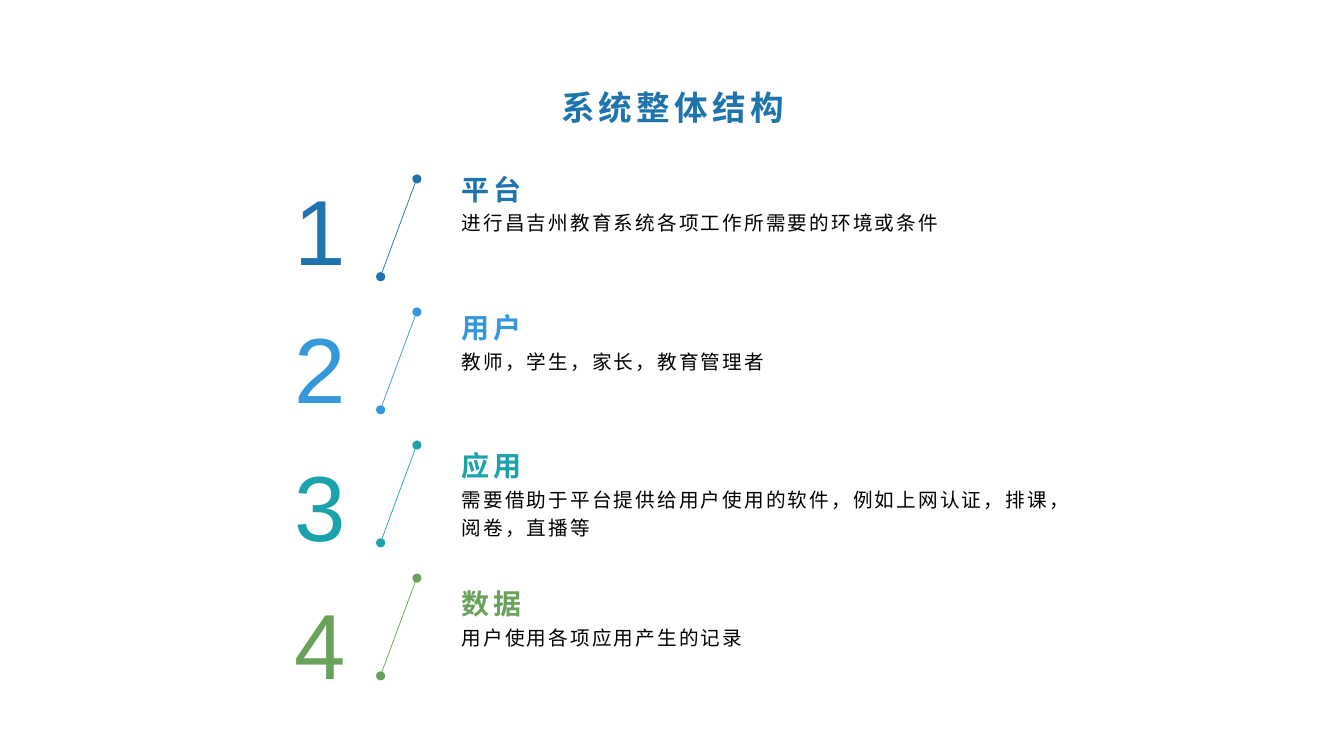
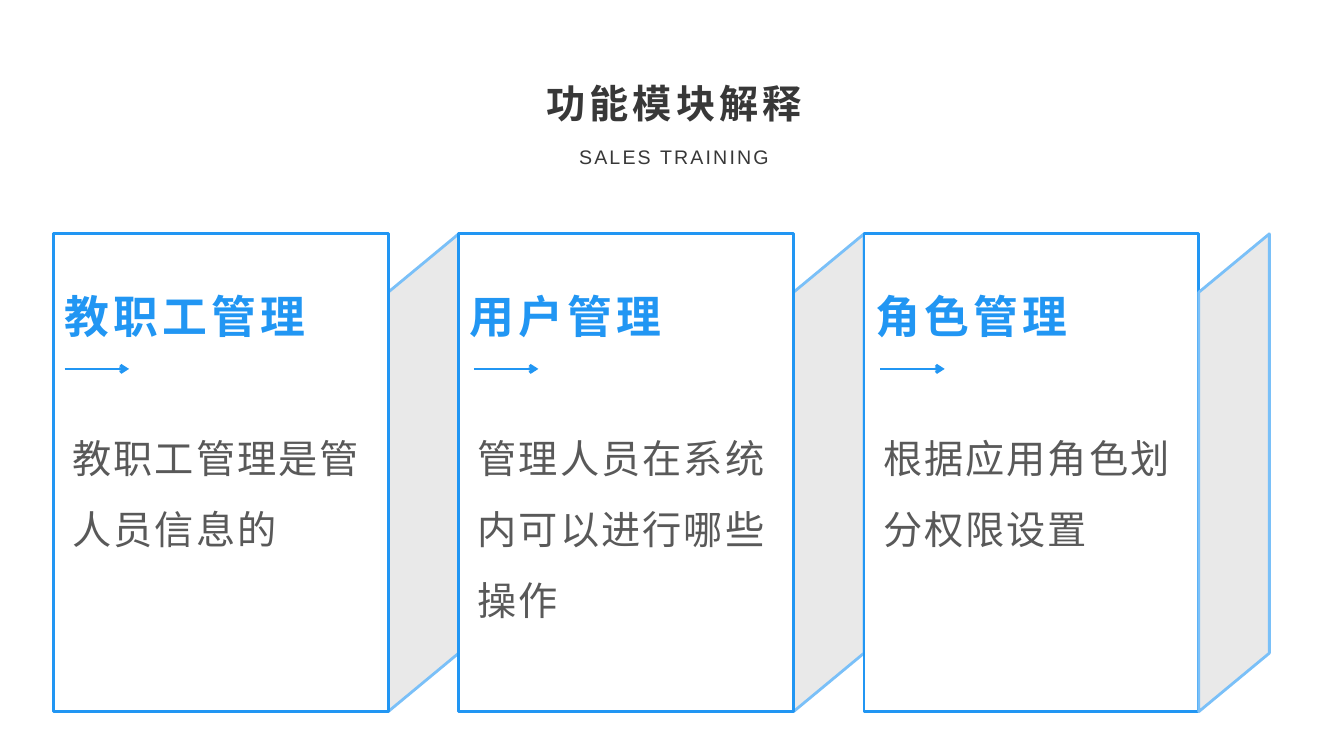
from pptx import Presentation
from pptx.dml.color import RGBColor
from pptx.enum.shapes import MSO_CONNECTOR, MSO_SHAPE
from pptx.enum.text import MSO_ANCHOR, PP_ALIGN
from pptx.oxml.ns import qn
from pptx.util import Inches, Pt
from lxml.etree import SubElement

COLORS = {
    "navy": "1F74AD",
    "sky": "3498DB",
    "teal": "1AA3AA",
    "green": "69A35B",
    "black": "000000",
    "heading": "383838",
    "body": "595959",
    "panel": "FFFFFF",
    "panel_edge": "2196F3",
    "side": "E9E9E9",
    "side_edge": "7AC0F8",
}
CJK = "Noto Sans CJK SC"


def text_style(size, line_spacing, spacing=1.5, name="Arial", bold=False,
               alignment=PP_ALIGN.LEFT, **frame):
    return {
        "font": {"size": Pt(size), "name": name, "bold": bold},
        "paragraph": {"line_spacing": line_spacing, "alignment": alignment},
        "frame": {"word_wrap": True, **frame},
        "spacing": spacing,
    }


STYLES = {
    "structure_title": text_style(24, 1.2, 3, bold=True, alignment=PP_ALIGN.CENTER,
                                  vertical_anchor=MSO_ANCHOR.MIDDLE),
    "number": text_style(66, 1.1),
    "layer": text_style(20, 1.1, 3, bold=True, margin_bottom=0,
                        vertical_anchor=MSO_ANCHOR.BOTTOM),
    "layer_detail": text_style(14, 1.2, margin_top=0),
    "module_title": text_style(28, 1.1, 3, CJK, True, PP_ALIGN.CENTER),
    "subtitle": text_style(14, 1.2, alignment=PP_ALIGN.CENTER),
    "module": text_style(32, 1.2, 3, CJK, True, vertical_anchor=MSO_ANCHOR.MIDDLE),
    "module_detail": text_style(28, 1.5, name=CJK),
}

LAYERS = [
    ("平台", "进行昌吉州教育系统各项工作所需要的环境或条件", "navy"),
    ("用户", "教师，学生，家长，教育管理者", "sky"),
    ("应用", "需要借助于平台提供给用户使用的软件，例如上网认证，排课，阅卷，直播等", "teal"),
    ("数据", "用户使用各项应用产生的记录", "green"),
]
MODULES = [
    ("教职工管理", "教职工管理是管人员信息的", 0.64),
    ("用户管理", "管理人员在系统内可以进行哪些操作", 4.7),
    ("角色管理", "根据应用角色划分权限设置", 8.73),
]

LAYER_TOP, LAYER_PITCH = 1.6, 1.37
LINK_TOP, LINK_PITCH = 1.73, 1.32
DOT = 0.09
PANEL_LEFT, PANEL_PITCH = 0.53, 4.02
PANEL_TOP, PANEL_WIDTH, PANEL_HEIGHT = 2.32, 3.32, 4.74
SIDE_DEPTH, SIDE_DROP = 0.7, 0.58


def rgb(color):
    return RGBColor.from_string(COLORS[color])


def apply_format(target, values):
    for attribute, value in values.items():
        setattr(target, attribute, value)


def add_text(slide, text, left, top, width, height, style, color):
    look = STYLES[style]
    box = slide.shapes.add_textbox(*map(Inches, (left, top, width, height)))
    apply_format(box.text_frame, look["frame"])
    paragraph = box.text_frame.paragraphs[0]
    apply_format(paragraph, look["paragraph"])
    run = paragraph.add_run()
    run.text = text
    apply_format(run.font, look["font"])
    run.font.color.rgb = rgb(color)
    properties = run._r.get_or_add_rPr()
    properties.set("spc", str(round(look["spacing"] * 100)))
    SubElement(properties, qn("a:ea")).set("typeface", CJK)


def paint(shape, fill, edge=None):
    shape.shadow.inherit = False
    shape.fill.solid()
    shape.fill.fore_color.rgb = rgb(fill)
    if edge:
        shape.line.color.rgb = rgb(edge)
        shape.line.width = Pt(2)
    else:
        shape.line.fill.background()


def add_line(slide, start, end, color, width, arrow=False):
    line = slide.shapes.add_connector(
        MSO_CONNECTOR.STRAIGHT, *map(Inches, (*start, *end)))
    line.line.color.rgb = rgb(color)
    line.line.width = Pt(width)
    if arrow:
        SubElement(line.line._get_or_add_ln(), qn("a:tailEnd")).set("type", "arrow")
    SubElement(line._element.spPr, qn("a:effectLst"))


def add_link(slide, top, color):
    add_line(slide, (3.79, top + 0.97), (4.12, top + 0.08), color, 0.5)
    for left, dot_top in ((4.09, top), (3.73, top + 0.97)):
        dot = slide.shapes.add_shape(
            MSO_SHAPE.OVAL, *map(Inches, (left, dot_top, DOT, DOT)))
        paint(dot, color)


def add_panel(slide, left):
    panel = slide.shapes.add_shape(
        MSO_SHAPE.RECTANGLE,
        *map(Inches, (left, PANEL_TOP, PANEL_WIDTH, PANEL_HEIGHT)))
    paint(panel, "panel", "panel_edge")


def add_side(slide, panel_left):
    near = panel_left + PANEL_WIDTH
    far = near + SIDE_DEPTH
    bottom = PANEL_TOP + PANEL_HEIGHT
    corners = [(near, PANEL_TOP + SIDE_DROP), (near, bottom),
               (far, bottom - SIDE_DROP), (far, PANEL_TOP)]
    start, *others = [(Inches(x), Inches(y)) for x, y in corners]
    outline = slide.shapes.build_freeform(*start)
    outline.add_line_segments(others, close=True)
    paint(outline.convert_to_shape(), "side", "side_edge")


def build_structure(slide):
    add_text(slide, "系统整体结构", 2.2, 0.68, 8.94, 0.69, "structure_title", "navy")
    for index, (layer, detail, color) in enumerate(LAYERS):
        top = LAYER_TOP + index * LAYER_PITCH
        add_text(slide, str(index + 1), 2.82, top - 0.04, 0.73, 1.22, "number", color)
        add_link(slide, LINK_TOP + index * LINK_PITCH, color)
        add_text(slide, layer, 4.48, top, 6.03, 0.44, "layer", color)
        add_text(slide, detail, 4.48, top + 0.45, 6.03, 0.69, "layer_detail", "black")


def build_modules(slide):
    add_text(slide, "功能模块解释", 0.5, 0.69, 12.37, 0.62, "module_title", "heading")
    add_text(slide, "SALES TRAINING", 0.5, 1.34, 12.37, 0.36, "subtitle", "heading")
    lefts = [PANEL_LEFT + index * PANEL_PITCH for index in range(len(MODULES))]
    for left in lefts[:-1]:
        add_side(slide, left)
    for left, (module, detail, arrow_left) in zip(lefts, MODULES):
        add_panel(slide, left)
        add_text(slide, module, left + 0.01, 2.79, 3.29, 0.58, "module", "panel_edge")
        add_text(slide, detail, left + 0.09, 4.03, 3.14, 2.22, "module_detail", "body")
        add_line(slide, (arrow_left, 3.66), (arrow_left + 0.64, 3.66),
                 "panel_edge", 2, arrow=True)
    add_side(slide, lefts[-1])


def main():
    deck = Presentation()
    deck.slide_width, deck.slide_height = Inches(13.33), Inches(7.5)
    for build in (build_structure, build_modules):
        build(deck.slides.add_slide(deck.slide_layouts[6]))
    deck.save("out.pptx")


if __name__ == "__main__":
    main()
